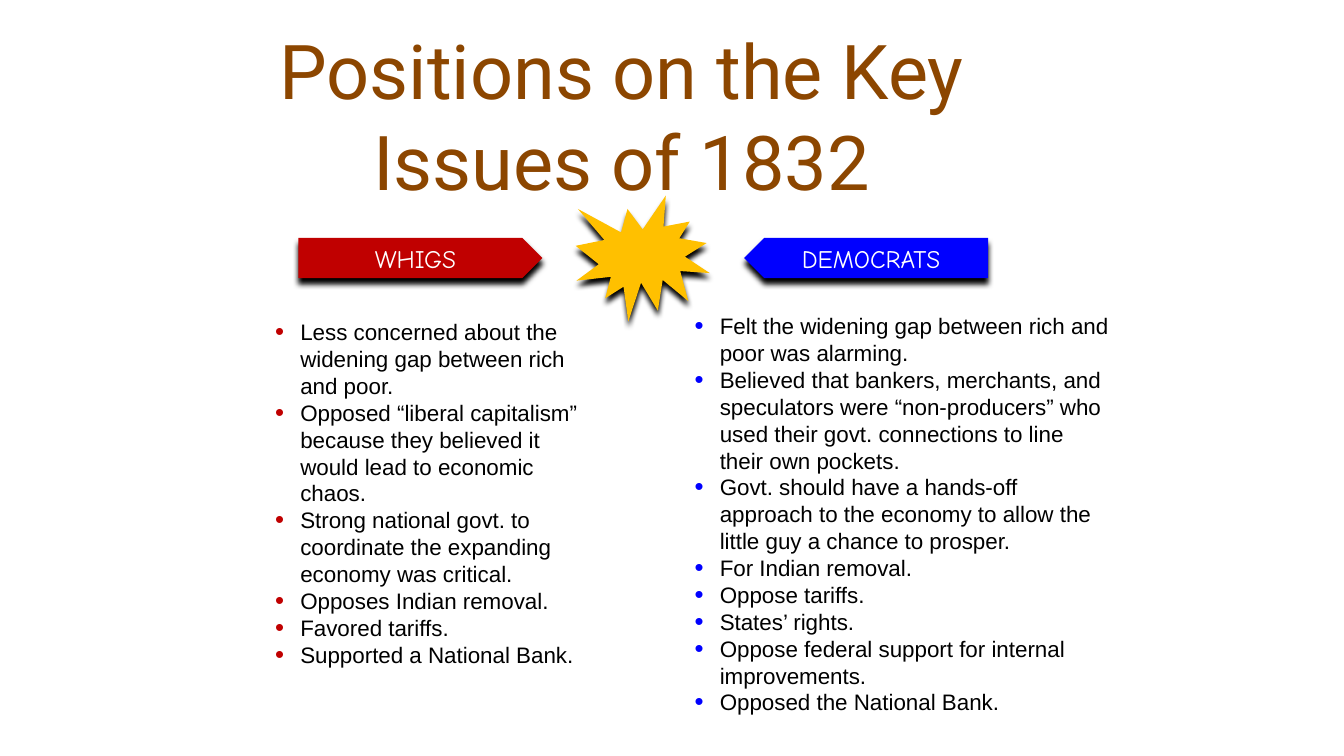
from dataclasses import dataclass
from typing import Any

from lxml import etree
from pptx import Presentation
from pptx.dml.color import RGBColor
from pptx.enum.shapes import MSO_SHAPE as Geo
from pptx.enum.text import MSO_ANCHOR as Anchor, MSO_AUTO_SIZE as Fit, PP_ALIGN as Align
from pptx.oxml.ns import qn
from pptx.util import Emu, Pt

EMU_PER_PX = 9144  # 100 px to the inch


@dataclass(frozen=True)
class Theme:
    title: str = "8C4600"
    whig: str = "C00000"
    democrat: str = "0000FF"
    burst: str = "FFC000"
    light: str = "FFFFFF"
    dark: str = "000000"
    title_shadow: str = "DDDDDD"
    title_size: int = 54
    banner_size: int = 18
    body_size: int = 16


@dataclass(frozen=True)
class Box:
    x: int
    y: int
    w: int
    h: int


@dataclass(frozen=True)
class Party:
    name: str
    colour: str
    banner: Box
    flipped: bool
    body: Box
    points: tuple[str, ...]


T = Theme()
TITLE_FONT = dict(name="Roboto", size=Pt(T.title_size))
BANNER_FONT = dict(name="Comic Neue", size=Pt(T.banner_size))
BODY_FONT = dict(name="Arial", size=Pt(T.body_size))
INDENT = 25

PARTIES = (
    Party("WHIGS", T.whig, Box(296, 236, 242, 40), False, Box(263, 311, 333, 387), (
        "Less concerned about the widening gap between rich and poor.",
        "Opposed “liberal capitalism” because they believed it would lead to economic chaos.",
        "Strong national govt. to coordinate the expanding economy was critical.",
        "Opposes Indian removal.",
        "Favored tariffs.",
        "Supported a National Bank.",
    )),
    Party("DEMOCRATS", T.democrat, Box(738, 236, 242, 40), True, Box(679, 305, 432, 414), (
        "Felt the widening gap between rich and poor was alarming.",
        "Believed that bankers, merchants, and speculators were “non-producers” who used "
        "their govt. connections to line their own pockets.",
        "Govt. should have a hands-off approach to the economy to allow the little guy "
        "a chance to prosper.",
        "For Indian removal.",
        "Oppose tariffs.",
        "States’ rights.",
        "Oppose federal support for internal improvements.",
        "Opposed the National Bank.",
    )),
)


def px(n: int) -> Emu:
    return Emu(n * EMU_PER_PX)


def place(box: Box) -> tuple[Emu, Emu, Emu, Emu]:
    return px(box.x), px(box.y), px(box.w), px(box.h)


def add(parent: Any, tag: str, **attrs: Any) -> Any:
    return etree.SubElement(parent, qn(tag), {k: str(v) for k, v in attrs.items()})


def add_shadow(effects: Any, colour: str, blur: float, dist: float, angle: int) -> None:
    shadow = add(effects, "a:outerShdw", blurRad=Pt(blur), dist=Pt(dist),
                 dir=angle * 60000, algn="ctr", rotWithShape=0)
    add(shadow, "a:srgbClr", val=colour)


def add_text(p: Any, text: str, colour: str, font: dict[str, Any]) -> Any:
    r = p.add_run()
    r.text = text
    for key, value in font.items():
        setattr(r.font, key, value)
    r.font.color.rgb = RGBColor.from_string(colour)
    return r


def add_frame(s: Any, box: Box) -> Any:
    tf = s.shapes.add_textbox(*place(box)).text_frame
    tf.word_wrap, tf.auto_size = True, Fit.SHAPE_TO_FIT_TEXT
    return tf


def add_solid(s: Any, geo: Geo, box: Box, colour: str) -> Any:
    sp = s.shapes.add_shape(geo, *place(box))
    sp.fill.solid()
    sp.fill.fore_color.rgb = RGBColor.from_string(colour)
    sp.line.fill.background()
    sp.shadow.inherit = False
    add_shadow(sp._element.spPr.find(qn("a:effectLst")), T.dark, 4, 4, 90)
    return sp


def add_title(s: Any, text: str, box: Box) -> None:
    p = add_frame(s, box).paragraphs[0]
    p.alignment = Align.CENTER
    r = add_text(p, text, T.title, TITLE_FONT)
    effects = etree.Element(qn("a:effectLst"))
    r.font._element.find(qn("a:solidFill")).addnext(effects)
    add_shadow(effects, T.title_shadow, 0, 2, 45)


def add_banner(s: Any, party: Party) -> None:
    sp = add_solid(s, Geo.PENTAGON, party.banner, party.colour)
    if party.flipped:
        sp._element.spPr.find(qn("a:xfrm")).set("flipH", "1")
    tf = sp.text_frame
    for key, value in dict(word_wrap=True, vertical_anchor=Anchor.MIDDLE,
                           auto_size=Fit.SHAPE_TO_FIT_TEXT).items():
        setattr(tf, key, value)
    p = tf.paragraphs[0]
    p.alignment = Align.CENTER
    add_text(p, party.name, T.light, BANNER_FONT)


def add_bullet(p: Any, colour: str) -> None:
    ppr = p._p.get_or_add_pPr()
    ppr.set("marL", str(px(INDENT)))
    ppr.set("indent", str(px(-INDENT)))
    add(add(ppr, "a:buClr"), "a:srgbClr", val=colour)
    add(ppr, "a:buSzPct", val=115000)
    add(ppr, "a:buFont", typeface=BODY_FONT["name"])
    add(ppr, "a:buChar", char="•")
    add(add(ppr, "a:tabLst"), "a:tab", pos=px(INDENT), algn="l")


def add_points(s: Any, party: Party) -> None:
    tf = add_frame(s, party.body)
    for i, point in enumerate(party.points):
        p = tf.add_paragraph() if i else tf.paragraphs[0]
        add_bullet(p, party.colour)
        add_text(p, point, T.dark, BODY_FONT)


def main() -> None:
    prs = Presentation()
    prs.slide_width, prs.slide_height = px(1333), px(750)
    s = prs.slides.add_slide(prs.slide_layouts[6])

    # Heading
    add_title(s, "Positions on the Key Issues of 1832", Box(208, 19, 817, 101))

    # Party banners facing the burst
    for party in PARTIES:
        add_banner(s, party)
    add_solid(s, Geo.EXPLOSION1, Box(571, 194, 133, 125), T.burst)

    # Positions of each party
    for party in PARTIES:
        add_points(s, party)

    prs.save("out.pptx")


if __name__ == "__main__":
    main()
